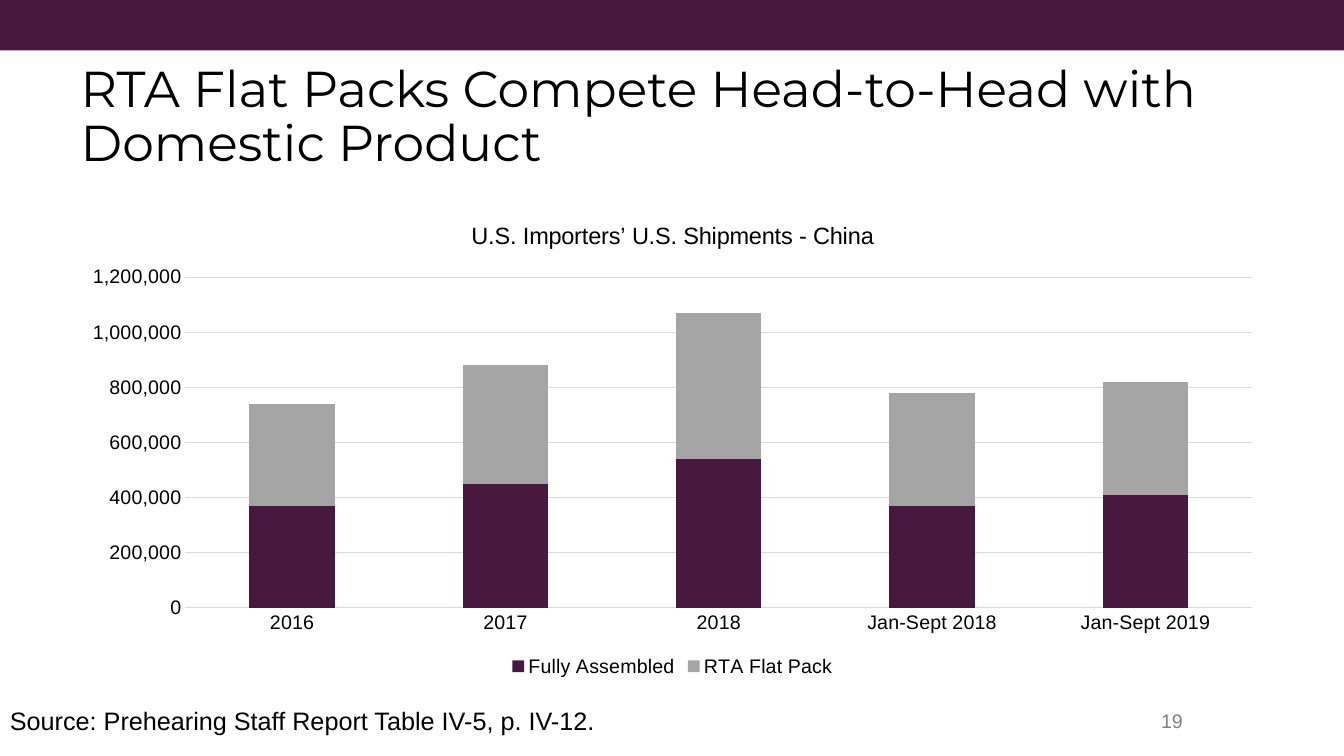
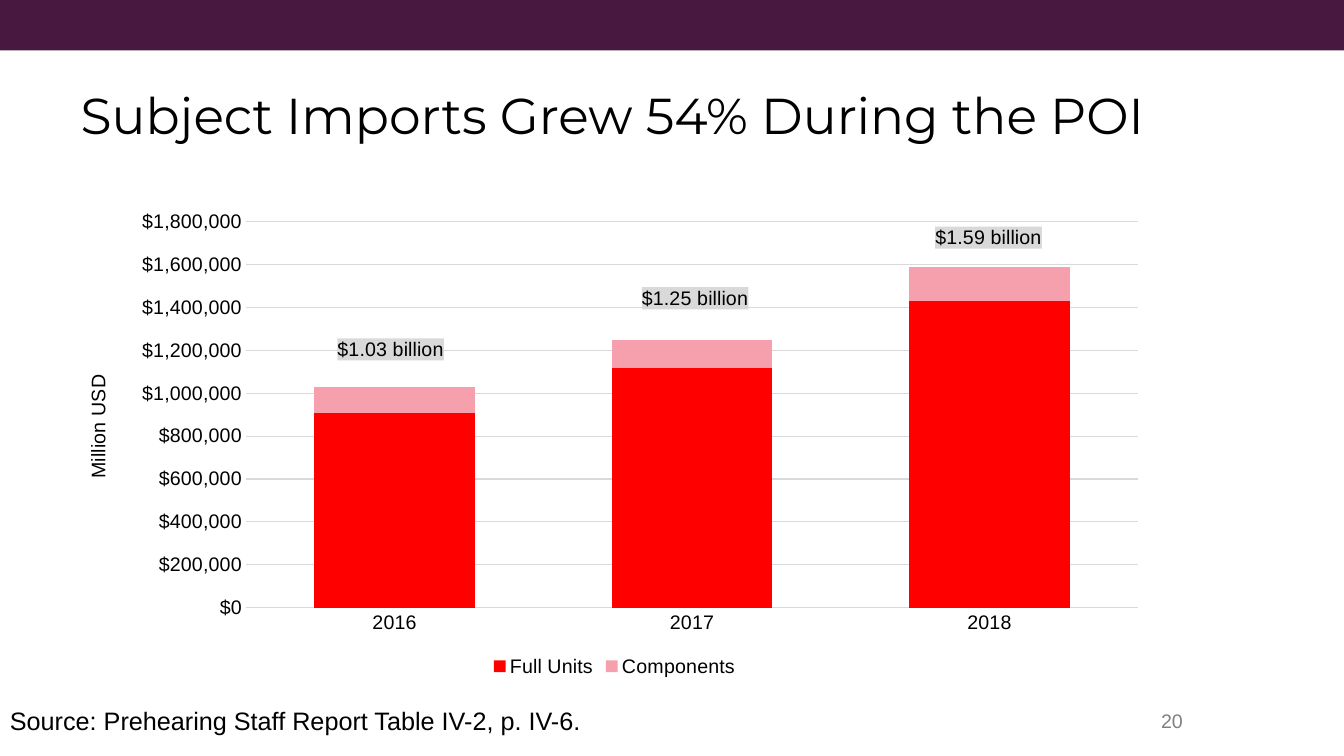
from dataclasses import dataclass

from lxml import etree
from pptx import Presentation
from pptx.chart.chart import Chart
from pptx.chart.data import CategoryChartData
from pptx.dml.color import RGBColor
from pptx.enum.chart import XL_CHART_TYPE, XL_LABEL_POSITION, XL_LEGEND_POSITION, XL_TICK_MARK
from pptx.enum.shapes import MSO_SHAPE
from pptx.enum.text import MSO_ANCHOR, MSO_AUTO_SIZE, PP_ALIGN
from pptx.oxml import parse_xml
from pptx.oxml.ns import nsdecls, qn
from pptx.slide import Slide
from pptx.text.text import Font, TextFrame
from pptx.util import Inches, Pt

STACKED = XL_CHART_TYPE.COLUMN_STACKED
CENTER = XL_LABEL_POSITION.CENTER
BOTTOM = XL_LEGEND_POSITION.BOTTOM
NO_TICK = XL_TICK_MARK.NONE
RECT = MSO_SHAPE.RECTANGLE
MIDDLE = MSO_ANCHOR.MIDDLE
FIT = MSO_AUTO_SIZE.SHAPE_TO_FIT_TEXT
FIXED = MSO_AUTO_SIZE.NONE
LEFT, RIGHT = PP_ALIGN.LEFT, PP_ALIGN.RIGHT

PLUM = RGBColor(0x49, 0x18, 0x40)
BLACK = RGBColor(0x00, 0x00, 0x00)
GRAY = RGBColor(0x80, 0x80, 0x80)
SILVER = RGBColor(0xA5, 0xA5, 0xA5)
PALE = RGBColor(0xD9, 0xD9, 0xD9)
RED = RGBColor(0xFF, 0x00, 0x00)
PINK = RGBColor(0xF7, 0xA0, 0xAD)

HEAD, BODY = "Montserrat", "Arial"
WIDTH = 13.33
TALL = 4.76
TITLE_ONLY = 5


@dataclass(frozen=True)
class Series:
    """One stack layer of a chart."""
    name: str
    color: RGBColor
    values: tuple[int, ...]


@dataclass(frozen=True)
class Label:
    """A total above a column, with its shift in inches."""
    text: str
    dx: float
    dy: float


@dataclass(frozen=True)
class Page:
    """The content of one slide, with its plot frame in inches."""
    number: int
    title: str
    source: str
    width: float
    plot: tuple[float, float, float, float]
    cats: tuple[str, ...]
    layers: tuple[Series, ...]
    top: int
    format: str
    gap: int
    head: str = ""
    unit: str = ""
    labels: tuple[Label, ...] = ()


PAGES = (
    Page(
        19, "RTA Flat Packs Compete Head-to-Head with Domestic Product",
        "Source: Prehearing Staff Report Table IV-5, p. IV-12.",
        11.98, (1.16, 0.75, 10.58, 3.28),
        ("2016", "2017", "2018", "Jan-Sept 2018", "Jan-Sept 2019"),
        (
            Series("Fully Assembled", PLUM, (370000, 450000, 540000, 370000, 410000)),
            Series("RTA Flat Pack", SILVER, (370000, 430000, 530000, 410000, 410000)),
        ),
        1200000, "#,##0", 150, head="U.S. Importers’ U.S. Shipments - China",
    ),
    Page(
        20, "Subject Imports Grew 54% During the POI",
        "Source: Prehearing Staff Report Table IV-2, p. IV-6.",
        10.83, (1.76, 0.2, 8.85, 3.83),
        ("2016", "2017", "2018"),
        (
            Series("Full Units", RED, (910000, 1120000, 1430000)),
            Series("Components", PINK, (120000, 130000, 160000)),
        ),
        1800000, '"$"#,##0', 85, unit="Million USD",
        labels=(
            Label("$1.03 billion", -0.04, -0.5),
            Label("$1.25 billion", 0.03, -0.55),
            Label("$1.59 billion", -0.01, -0.46),
        ),
    ),
)


def style(font: Font, size: float = 14, color: RGBColor = BLACK, face: str = BODY) -> None:
    """Set the look of a font."""
    font.size, font.name, font.bold = Pt(size), face, False
    font.color.rgb = color


def write(frame: TextFrame, text: str, *, size: float = 14, color: RGBColor = BLACK,
          face: str = BODY, align: PP_ALIGN | None = None,
          spacing: float | None = None) -> None:
    """Fill a text frame with one formatted paragraph."""
    line = frame.paragraphs[0]
    run = line.add_run()
    run.text = text
    style(run.font, size, color, face)
    if align is not None:
        line.alignment = align
    if spacing is not None:
        line.line_spacing = spacing


def layout(wide: float, *place: float, edge: bool = True) -> etree._Element:
    """Build a chart layout from inches: a frame, a corner, or a shift."""
    node = parse_xml(f'<c:layout {nsdecls("c")}><c:manualLayout/></c:layout>')
    parts = [("layoutTarget", "inner")] if len(place) == 4 else []
    if edge:
        parts += [("xMode", "edge"), ("yMode", "edge")]
    parts += [(tag, inch / side)
              for tag, inch, side in zip("xywh", place, (wide, TALL, wide, TALL))]
    for tag, value in parts:
        etree.SubElement(node[0], qn(f"c:{tag}")).set("val", str(value))
    return node


def clear(node: etree._Element) -> None:
    """Remove the automatic layout of a chart part."""
    for old in node.findall(qn("c:layout")):
        node.remove(old)


def add_labels(chart: Chart, page: Page) -> None:
    """Write the totals on the top layer and lift them above the columns."""
    points = chart.plots[0].series[-1].points
    for index, label in enumerate(page.labels):
        tag = points[index].data_label
        write(tag.text_frame, label.text)
        tag.position = CENTER
    for node, label in zip(chart.element.iter(qn("c:dLbl")), page.labels):
        node.find(qn("c:idx")).addnext(layout(page.width, label.dx, label.dy, edge=False))
        node.find(qn("c:tx")).addnext(parse_xml(
            f'<c:spPr {nsdecls("c", "a")}><a:solidFill><a:srgbClr val="{PALE}"/>'
            '</a:solidFill><a:ln><a:noFill/></a:ln></c:spPr>'))
    for leader in chart.element.iter(qn("c:showLeaderLines")):
        leader.set("val", "0")


def format_axes(chart: Chart, page: Page) -> None:
    """Format both axes and the grid."""
    across, upright = chart.category_axis, chart.value_axis
    for axis in (across, upright):
        axis.major_tick_mark = axis.minor_tick_mark = NO_TICK
        style(axis.tick_labels.font)
    upright.has_major_gridlines = True
    for line in (across.format.line, upright.major_gridlines.format.line):
        line.color.rgb, line.width = PALE, Pt(0.75)
    upright.format.line.fill.background()
    upright.minimum_scale, upright.maximum_scale = 0, page.top
    upright.major_unit = 200000
    upright.tick_labels.number_format = page.format
    upright.tick_labels.number_format_is_linked = False
    if page.unit:
        write(upright.axis_title.text_frame, page.unit)
        title = next(chart.element.iter(qn("c:valAx"))).find(qn("c:title"))
        clear(title)
        title.find(qn("c:tx")).addnext(layout(page.width, 0.13, 1.68))


def add_columns(slide: Slide, page: Page) -> None:
    """Draw the stacked column chart of a page."""
    data = CategoryChartData()
    data.categories = page.cats
    for layer in page.layers:
        data.add_series(layer.name, layer.values)
    chart = slide.shapes.add_chart(
        STACKED, Inches(0.68), Inches(2), Inches(page.width), Inches(TALL), data).chart
    style(chart.font)
    chart.has_title = bool(page.head)
    if page.head:
        write(chart.chart_title.text_frame, page.head, size=16.8)
        chart.chart_title.include_in_layout = False
    chart.has_legend = True
    chart.legend.position = BOTTOM
    chart.legend.include_in_layout = False
    style(chart.legend.font)
    plot = chart.plots[0]
    plot.gap_width, plot.overlap, plot.vary_by_categories = page.gap, 100, False
    for series, layer in zip(plot.series, page.layers):
        series.format.fill.solid()
        series.format.fill.fore_color.rgb = layer.color
    format_axes(chart, page)
    add_labels(chart, page)
    area = next(chart.element.iter(qn("c:plotArea")))
    clear(area)
    area.insert(0, layout(page.width, *page.plot))


def add_frame(slide: Slide, page: Page) -> None:
    """Add the band, title, source and page number."""
    band = slide.shapes.add_shape(RECT, 0, 0, Inches(WIDTH), Inches(0.5))
    band.shadow.inherit = False
    band.fill.solid()
    band.fill.fore_color.rgb = PLUM
    band.line.fill.background()

    title = slide.shapes.title
    title.left, title.top = Inches(0.7), Inches(0.5)
    title.width, title.height = Inches(11.96), Inches(1.35)
    frame = title.text_frame
    frame.auto_size, frame.word_wrap, frame.vertical_anchor = FIXED, True, MIDDLE
    write(frame, page.title, size=36, face=HEAD, align=LEFT, spacing=0.9)

    top, height = Inches(6.95), Inches(0.4)
    source = slide.shapes.add_textbox(0, top, Inches(7.18), height).text_frame
    source.word_wrap, source.auto_size = True, FIT
    write(source, page.source, size=18)
    number = slide.shapes.add_textbox(Inches(10.48), top, Inches(1.35), height).text_frame
    number.word_wrap, number.vertical_anchor = True, MIDDLE
    write(number, str(page.number), color=GRAY, align=RIGHT)


def main() -> None:
    """Build and save the deck."""
    deck = Presentation()
    deck.slide_width, deck.slide_height = Inches(WIDTH), Inches(7.5)
    for page in PAGES:
        slide = deck.slides.add_slide(deck.slide_layouts[TITLE_ONLY])
        add_frame(slide, page)
        add_columns(slide, page)
    deck.save("out.pptx")


if __name__ == "__main__":
    main()
